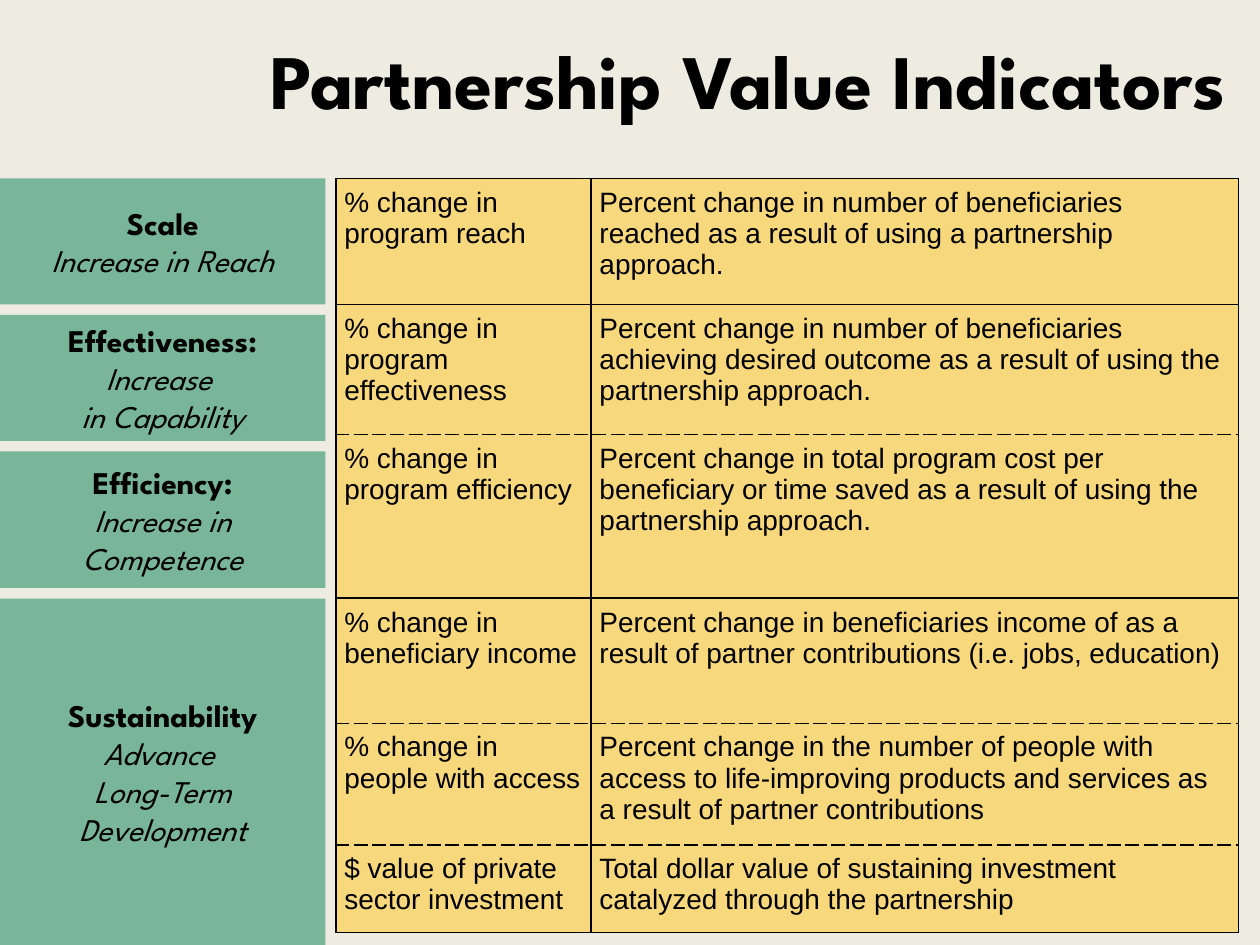
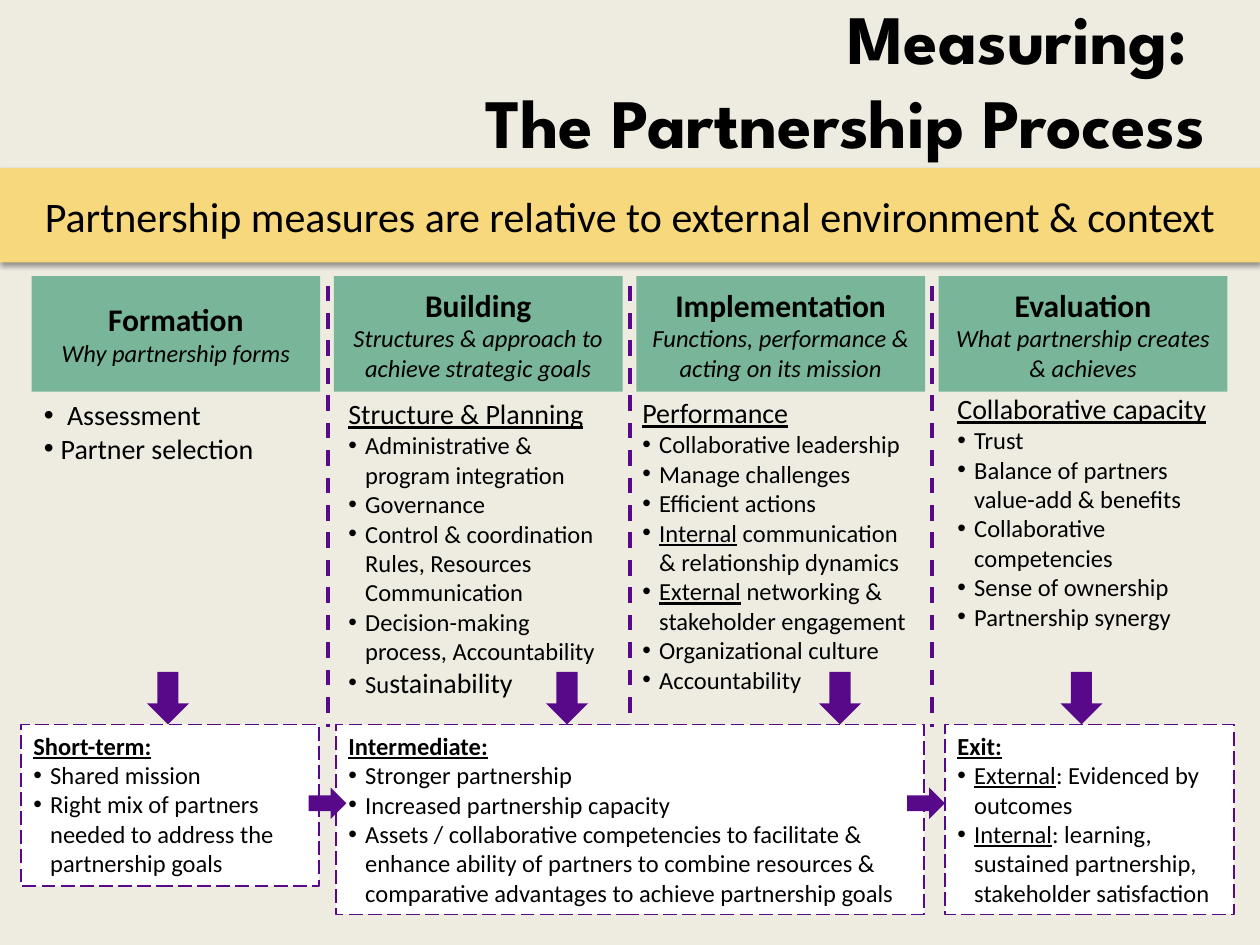
from dataclasses import dataclass
from typing import NamedTuple, Optional

from lxml.etree import SubElement
from pptx import Presentation
from pptx.dml.color import RGBColor
from pptx.enum.dml import MSO_LINE
from pptx.enum.shapes import MSO_CONNECTOR, MSO_SHAPE as Shape
from pptx.enum.text import MSO_ANCHOR as Anchor, MSO_AUTO_SIZE as AutoSize, PP_ALIGN as Align
from pptx.oxml.ns import qn
from pptx.util import Emu, Pt

EMU_PER_PX = 7620  # 120 px to the inch


# ---- Theme ----
@dataclass(frozen=True)
class Theme:
    paper: str = "EEECE1"
    green: str = "79B598"
    yellow: str = "F8D87C"
    purple: str = "580989"
    white: str = "FFFFFF"
    ink: str = "000000"
    display: str = "League Spartan"
    body: str = "Calibri"
    grid: str = "Arial"
    title_size: float = 44
    long_title_size: float = 39.6
    banner_size: float = 24
    head_size: float = 18
    lead_size: float = 16
    text_size: float = 14


THEME = Theme()


class Box(NamedTuple):
    left: int
    top: int
    width: int
    height: int


@dataclass(frozen=True)
class Span:
    text: str
    size: float = THEME.text_size
    face: str = THEME.body
    bold: bool = False
    italic: bool = False
    underline: bool = False


@dataclass(frozen=True)
class Para:
    spans: tuple
    bullet: bool = False


@dataclass(frozen=True)
class Label:
    """A green box: bold heading over italic lines."""
    box: Box
    heading: str
    lines: tuple


@dataclass(frozen=True)
class IndicatorGroup:
    top: int
    heights: tuple
    rows: tuple
    top_weight: float
    bottom_weight: float


@dataclass(frozen=True)
class Panel:
    box: Box
    paras: tuple


# ---- Text ----
def px(length: int) -> Emu:
    return Emu(length * EMU_PER_PX)


def rgb(colour: str) -> RGBColor:
    return RGBColor.from_string(colour)


def item(text: str, lead: str = "", size: float = THEME.text_size) -> Para:
    """A bullet, with an optional underlined lead-in."""
    spans = (Span(lead, size, underline=True),) if lead else ()
    return Para(spans + (Span(text, size),), bullet=True)


def items(*texts: str) -> tuple:
    return tuple(item(text) for text in texts)


def topic(text: str) -> Para:
    return Para((Span(text, THEME.lead_size, underline=True),))


def stage(text: str) -> Para:
    return Para((Span(text, bold=True, underline=True),))


def write(frame, paras: tuple, align=Align.LEFT, anchor=Anchor.TOP) -> None:
    frame.word_wrap = True
    frame.vertical_anchor = anchor
    for index, source in enumerate(paras):
        para = frame.add_paragraph() if index else frame.paragraphs[0]
        para.alignment = align
        if source.bullet:
            props = para._p.get_or_add_pPr()
            props.set("marL", str(px(16)))
            props.set("indent", str(px(-16)))
            SubElement(props, qn("a:buFont")).set("typeface", THEME.grid)
            SubElement(props, qn("a:buChar")).set("char", "•")
        for span in source.spans:
            run = para.add_run()
            run.text = span.text
            font = run.font
            font.name, font.size = span.face, Pt(span.size)
            font.bold, font.italic, font.underline = span.bold, span.italic, span.underline
            font.color.rgb = rgb(THEME.ink)


# ---- Drawing ----
def add_box(page, box: Box, fill: str, kind=Shape.RECTANGLE, outline: Optional[str] = None):
    shape = page.shapes.add_shape(kind, *map(px, box))
    shape.shadow.inherit = False
    shape.fill.solid()
    shape.fill.fore_color.rgb = rgb(fill)
    if outline:
        shape.line.color.rgb = rgb(outline)
        shape.line.width = Pt(1)
        shape.line.dash_style = MSO_LINE.LONG_DASH
    else:
        shape.line.fill.background()
    return shape


def add_text(page, box: Box, paras: tuple, align=Align.LEFT, anchor=Anchor.TOP) -> None:
    frame = page.shapes.add_textbox(*map(px, box)).text_frame
    write(frame, paras, align, anchor)


def add_page(deck, title_box: Box, size: float, *lines: str):
    page = deck.slides.add_slide(deck.slide_layouts[6])
    page.background.fill.solid()
    page.background.fill.fore_color.rgb = rgb(THEME.paper)
    paras = tuple(Para((Span(line, size, THEME.display, bold=True),)) for line in lines)
    add_text(page, title_box, paras, Align.RIGHT, Anchor.MIDDLE)
    return page


def add_label(page, label: Label, face: str, line_size: float) -> None:
    heading = Para((Span(label.heading, THEME.head_size, face, bold=True),))
    lines = tuple(Para((Span(line, line_size, face, italic=True),)) for line in label.lines)
    shape = add_box(page, label.box, THEME.green)
    write(shape.text_frame, (heading,) + lines, Align.CENTER, Anchor.MIDDLE)


def add_shadow(shape) -> None:
    effects = shape._element.spPr.find(qn("a:effectLst"))
    shadow = SubElement(effects, qn("a:outerShdw"), blurRad="40000", dist="20000",
                        dir="5400000", rotWithShape="0")
    colour = SubElement(shadow, qn("a:srgbClr"), val=THEME.ink)
    SubElement(colour, qn("a:alpha"), val="38000")


def add_divider(page, x: int, top: int, bottom: int) -> None:
    line = page.shapes.add_connector(MSO_CONNECTOR.STRAIGHT, px(x), px(top), px(x), px(bottom))
    line.line.color.rgb = rgb(THEME.purple)
    line.line.width = Pt(2.25)
    line.line.dash_style = MSO_LINE.DASH
    SubElement(line._element.spPr, qn("a:effectLst"))


def set_border(cell, side: str, weight: float, dash: str, position: int) -> None:
    props = cell._tc.get_or_add_tcPr()
    line = SubElement(props, qn(f"a:ln{side}"), w=str(Pt(weight)))
    fill = SubElement(line, qn("a:solidFill"))
    SubElement(fill, qn("a:srgbClr"), val=THEME.ink)
    SubElement(line, qn("a:prstDash"), val=dash)
    props.insert(position, line)  # borders come before the fill


def add_indicators(page, group: IndicatorGroup) -> None:
    widths = (243, 617)
    box = Box(320, group.top, sum(widths), sum(group.heights))
    count = len(group.rows)
    table = page.shapes.add_table(count, len(widths), *map(px, box)).table
    table.first_row = table.horz_banding = False
    for column, width in zip(table.columns, widths):
        column.width = px(width)
    for r, (height, texts) in enumerate(zip(group.heights, group.rows)):
        table.rows[r].height = px(height)
        top = (1, "dash") if r else (group.top_weight, "solid")
        bottom = (1, "dash") if r < count - 1 else (group.bottom_weight, "solid")
        for c, text in enumerate(texts):
            cell = table.cell(r, c)
            cell.margin_left = cell.margin_right = px(8)
            cell.margin_top = cell.margin_bottom = px(8)
            cell.fill.solid()
            cell.fill.fore_color.rgb = rgb(THEME.yellow)
            write(cell.text_frame, (Para((Span(text, THEME.lead_size, THEME.grid),)),))
            right = (0.75 if c else 1, "solid")
            borders = (("L", (1, "solid")), ("R", right), ("T", top), ("B", bottom))
            for position, (side, (weight, dash)) in enumerate(borders):
                set_border(cell, side, weight, dash, position)


# ---- Slide 1: indicators ----
VALUES = (
    Label(Box(0, 170, 310, 120), "Scale", ("Increase in Reach",)),
    Label(Box(0, 300, 310, 120), "Effectiveness:", ("Increase ", "in Capability")),
    Label(Box(0, 430, 310, 130), "Efficiency:", ("Increase in Competence",)),
    Label(Box(0, 570, 310, 330), "Sustainability", ("Advance ", "Long-Term Development")),
)

INDICATORS = (
    IndicatorGroup(170, (122,), (
        ("% change in program reach",
         "Percent change in number of beneficiaries reached as a result of using a "
         "partnership approach."),
    ), 0.75, 0.75),
    IndicatorGroup(290, (124, 155), (
        ("% change in program effectiveness",
         "Percent change in number of beneficiaries achieving desired outcome as a result "
         "of using the partnership approach."),
        ("% change in program efficiency",
         "Percent change in total program cost per beneficiary or time saved as a result "
         "of using the partnership approach."),
    ), 0.75, 1),
    IndicatorGroup(570, (119, 116, 83), (
        ("% change in beneficiary income",
         "Percent change in beneficiaries income of as a result of partner contributions "
         "(i.e. jobs, education)"),
        ("% change in people with access",
         "Percent change in the number of people with access to life-improving products "
         "and services as a result of partner contributions"),
        ("$ value of private sector investment",
         "Total dollar value of sustaining investment catalyzed through the partnership"),
    ), 1, 0.75),
)


def build_indicators(deck) -> None:
    page = add_page(deck, Box(100, 0, 1080, 150), THEME.title_size,
                    "Partnership Value Indicators")
    for group in INDICATORS:
        add_indicators(page, group)
    for value in VALUES:
        add_label(page, value, THEME.display, THEME.head_size)


# ---- Slide 2: process ----
COLUMN_STEP = 288
PHASES = (
    ("Formation", "Why partnership forms"),
    ("Building", "Structures & approach to achieve strategic goals"),
    ("Implementation", "Functions, performance & acting on its mission"),
    ("Evaluation", "What partnership creates & achieves"),
)

MEASURES = (
    Panel(Box(30, 373, 270, 77), (
        item(" Assessment", size=THEME.lead_size),
        item("Partner selection", size=THEME.lead_size))),
    Panel(Box(320, 372, 270, 302), (
        topic("Structure & Planning"),
        *items("Administrative & program integration", "Governance",
               "Control & coordination Rules, Resources Communication",
               "Decision-making process, Accountability"),
        Para((Span("Su"), Span("stainability", THEME.lead_size)), bullet=True))),
    Panel(Box(600, 371, 280, 299), (
        topic("Performance"),
        *items("Collaborative leadership", "Manage challenges", "Efficient actions"),
        item(" communication & relationship dynamics", "Internal"),
        item(" networking & stakeholder engagement", "External"),
        *items("Organizational culture", "Accountability"))),
    Panel(Box(900, 367, 270, 275), (
        topic("Collaborative capacity"),
        *items("Trust", "Balance of partners value-add & benefits",
               "Collaborative competencies", "Sense of ownership", "Partnership synergy"))),
)

OUTCOMES = (
    Panel(Box(20, 690, 284, 154), (
        stage("Short-term:"),
        *items("Shared mission",
               "Right mix of partners needed to address the partnership goals"))),
    Panel(Box(320, 690, 560, 181), (
        stage("Intermediate:"),
        *items("Stronger partnership", "Increased partnership capacity",
               "Assets / collaborative competencies to facilitate & enhance ability of "
               "partners to combine resources & comparative advantages to achieve "
               "partnership goals"))),
    Panel(Box(900, 690, 275, 181), (
        stage("Exit:"),
        item(": Evidenced by outcomes", "External"),
        item(": learning, sustained partnership, stakeholder satisfaction", "Internal"))),
)


def build_process(deck) -> None:
    page = add_page(deck, Box(260, 10, 900, 130), THEME.long_title_size,
                    "Measuring: ", "The Partnership Process")
    banner = add_box(page, Box(0, 160, 1200, 90), THEME.yellow)
    add_shadow(banner)
    message = "Partnership measures are relative to external environment & context"
    write(banner.text_frame, (Para((Span(message, THEME.banner_size),)),),
          Align.CENTER, Anchor.MIDDLE)

    for column, (name, purpose) in enumerate(PHASES):
        if column:
            add_divider(page, 24 + column * COLUMN_STEP, 272, 692)
        header = Box(30 + column * COLUMN_STEP, 263, 275, 110)
        add_label(page, Label(header, name, (purpose,)), THEME.body, THEME.text_size)
    for measure in MEASURES:
        add_text(page, measure.box, measure.paras)
    for outcome in OUTCOMES:
        shape = add_box(page, outcome.box, THEME.white, outline=THEME.purple)
        write(shape.text_frame, outcome.paras)
        shape.text_frame.auto_size = AutoSize.SHAPE_TO_FIT_TEXT

    for left in (294, 864):
        add_box(page, Box(left, 750, 36, 30), THEME.purple, Shape.RIGHT_ARROW)
    for centre in (160, 540, 800, 1030):
        add_box(page, Box(centre - 20, 640, 40, 50), THEME.purple, Shape.DOWN_ARROW)


def main() -> None:
    deck = Presentation()
    deck.slide_width, deck.slide_height = px(1200), px(900)
    build_indicators(deck)
    build_process(deck)
    deck.save("out.pptx")


if __name__ == "__main__":
    main()
